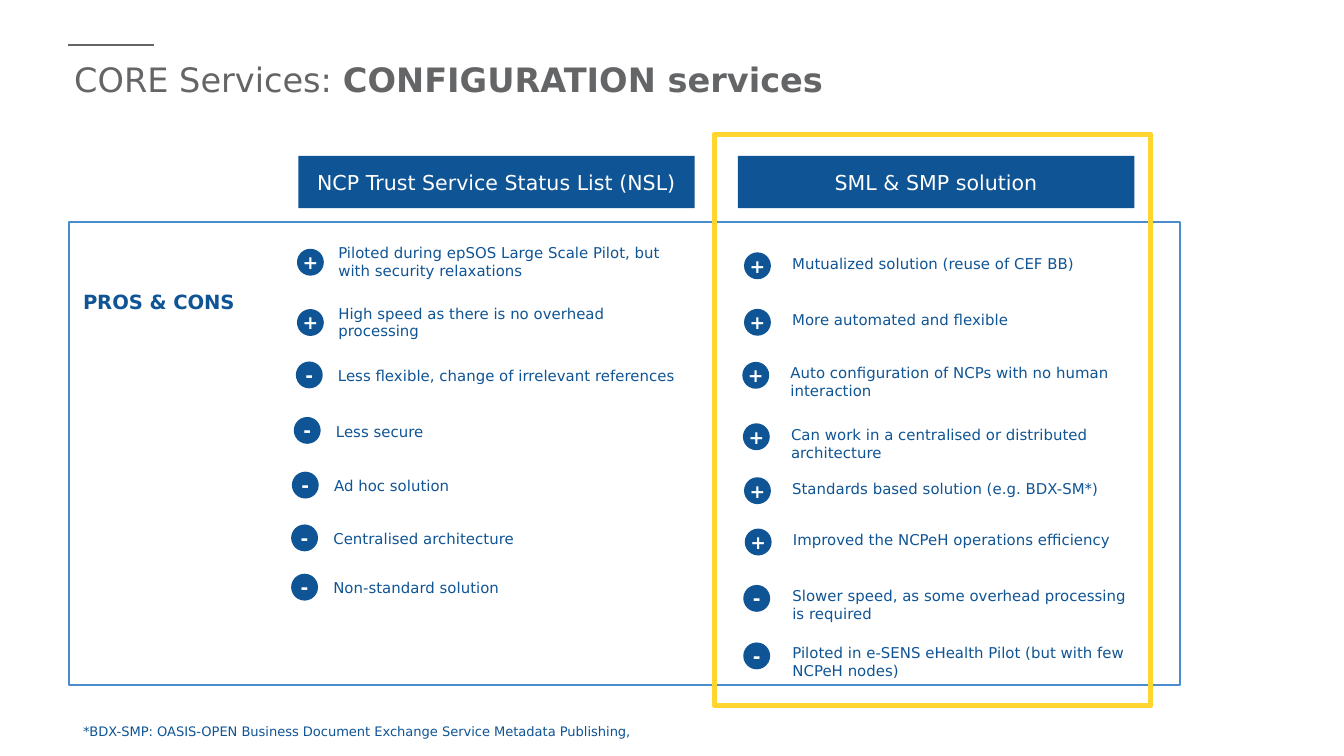
from pptx import Presentation
from pptx.dml.color import RGBColor
from pptx.enum.shapes import MSO_CONNECTOR, MSO_SHAPE
from pptx.enum.text import MSO_ANCHOR, PP_ALIGN
from pptx.oxml.ns import qn
from pptx.util import Pt
from lxml import etree

RECT, OVAL = MSO_SHAPE.RECTANGLE, MSO_SHAPE.OVAL
STRAIGHT = MSO_CONNECTOR.STRAIGHT
TOP, MIDDLE = MSO_ANCHOR.TOP, MSO_ANCHOR.MIDDLE
LEFT, CENTER = PP_ALIGN.LEFT, PP_ALIGN.CENTER

FONT = "DejaVu Sans"
NAVY = RGBColor(0x0F, 0x54, 0x94)
BLUE = RGBColor(0x49, 0x8D, 0xCC)
YELLOW = RGBColor(0xFF, 0xD5, 0x30)
GRAY = RGBColor(0x64, 0x65, 0x67)
WHITE = RGBColor(0xFF, 0xFF, 0xFF)

# Content; all lengths are points
TITLE = [("CORE Services: ", False), ("CONFIGURATION services", True)]
SOLUTIONS = [("NCP Trust Service Status List (NSL)", 159.8),
             ("SML & SMP solution", 395.3)]
FOOTNOTE = "*BDX-SMP: OASIS-OPEN Business Document Exchange Service Metadata Publishing,"

# Each group: sign, offset from badge to text, text size, rows of (badge left, badge top, text)
GROUPS = [
    ("+", (15.1, -6.2), (197.3, 38), [
        (159.1, 133.3, "Piloted during epSOS Large Scale Pilot, but with security relaxations"),
        (159.1, 165.6, "High speed as there is no overhead processing")]),
    ("-", (15.5, -0.7), (197.3, 24.5), [
        (158.5, 193.7, "Less flexible, change of irrelevant references"),
        (157.4, 223.4, "Less secure"),
        (156.4, 252.7, "Ad hoc solution"),
        (156, 281, "Centralised architecture"),
        (156, 307.4, "Non-standard solution")]),
    ("+", (18.7, -2.5), (189.4, 29.5), [
        (398.6, 135.2, "Mutualized solution (reuse of CEF BB)"),
        (398.6, 165.5, "More automated and flexible"),
        (397.7, 193.9, "Auto configuration of NCPs with no human interaction"),
        (398, 226.8, "Can work in a centralised or distributed architecture"),
        (398.6, 255.7, "Standards based solution (e.g. BDX-SM*)"),
        (399, 283.2, "Improved the NCPeH operations efficiency")]),
    ("-", (19.2, -2.9), (193.7, 20.2), [
        (398.2, 313.4, "Slower speed, as some overhead processing is required"),
        (398.2, 344.2, "Piloted in e-SENS eHealth Pilot (but with few NCPeH nodes)")]),
]
BADGE = 14.4

prs = Presentation()
prs.slide_width, prs.slide_height = Pt(720), Pt(405)
slide = prs.slides.add_slide(prs.slide_layouts[6])


def write(shape, runs, size, color, bold=None, align=LEFT, anchor=TOP, inset=None):
    frame = shape.text_frame
    frame.word_wrap = True
    frame.vertical_anchor = anchor
    if inset is not None:
        frame.margin_left = frame.margin_right = Pt(inset[0])
        frame.margin_top = frame.margin_bottom = Pt(inset[1])
    paragraph = frame.paragraphs[0]
    paragraph.alignment = align
    for text, run_bold in runs:
        run = paragraph.add_run()
        run.text = text
        if run_bold:
            run.font.bold = True
    font = paragraph.font
    font.name, font.size, font.bold = FONT, Pt(size), bold
    font.color.rgb = color
    return paragraph


def add_text(box, runs, size, color, **style):
    return write(slide.shapes.add_textbox(*map(Pt, box)), runs, size, color, **style)


def add_block(kind, box, fill=None, line=None, weight=1):
    shape = slide.shapes.add_shape(kind, *map(Pt, box))
    shape.shadow.inherit = False
    if fill is None:
        shape.fill.background()
    else:
        shape.fill.solid()
        shape.fill.fore_color.rgb = fill
    if line is None:
        shape.line.fill.background()
    else:
        shape.line.color.rgb = line
        shape.line.width = Pt(weight)
    return shape


# Title with its short rule
rule = slide.shapes.add_connector(STRAIGHT, Pt(36.7), Pt(24), Pt(82.5), Pt(24))
rule.line.color.rgb = GRAY
rule.line.width = Pt(1)
etree.SubElement(rule._element.spPr, qn("a:effectLst"))
add_text((36.7, 28, 647.3, 55.4), TITLE, 18, GRAY, inset=(3, 3.6))

# Column headers
for name, left in SOLUTIONS:
    header = add_block(RECT, (left, 83.5, 212.4, 28), NAVY)
    write(header, [(name, False)], 11, WHITE, align=CENTER, anchor=MIDDLE)

# Frame and its label
add_block(RECT, (37, 118.8, 595.4, 248.4), line=BLUE)
label = add_text((37.4, 145.4, 104.4, 26.6), [("PROS & CONS", False)], 10.5, NAVY, bold=True)
label.line_spacing = 1.5

# Pros and cons
for sign, (dx, dy), size, rows in GROUPS:
    for left, top, text in rows:
        add_text((left + dx, top + dy, *size), [(text, False)], 8, NAVY)
        badge = add_block(OVAL, (left, top, BADGE, BADGE), NAVY)
        write(badge, [(sign, False)], 10, WHITE, bold=True,
              align=CENTER, anchor=MIDDLE, inset=(0, 0))

# Highlight around the preferred solution
add_block(RECT, (382.6, 72, 234, 306), line=YELLOW, weight=2.75)

# Footnote
add_text((37.4, 383.8, 471.6, 15.8), [(FOOTNOTE, False)], 7, NAVY)

prs.save("out.pptx")
